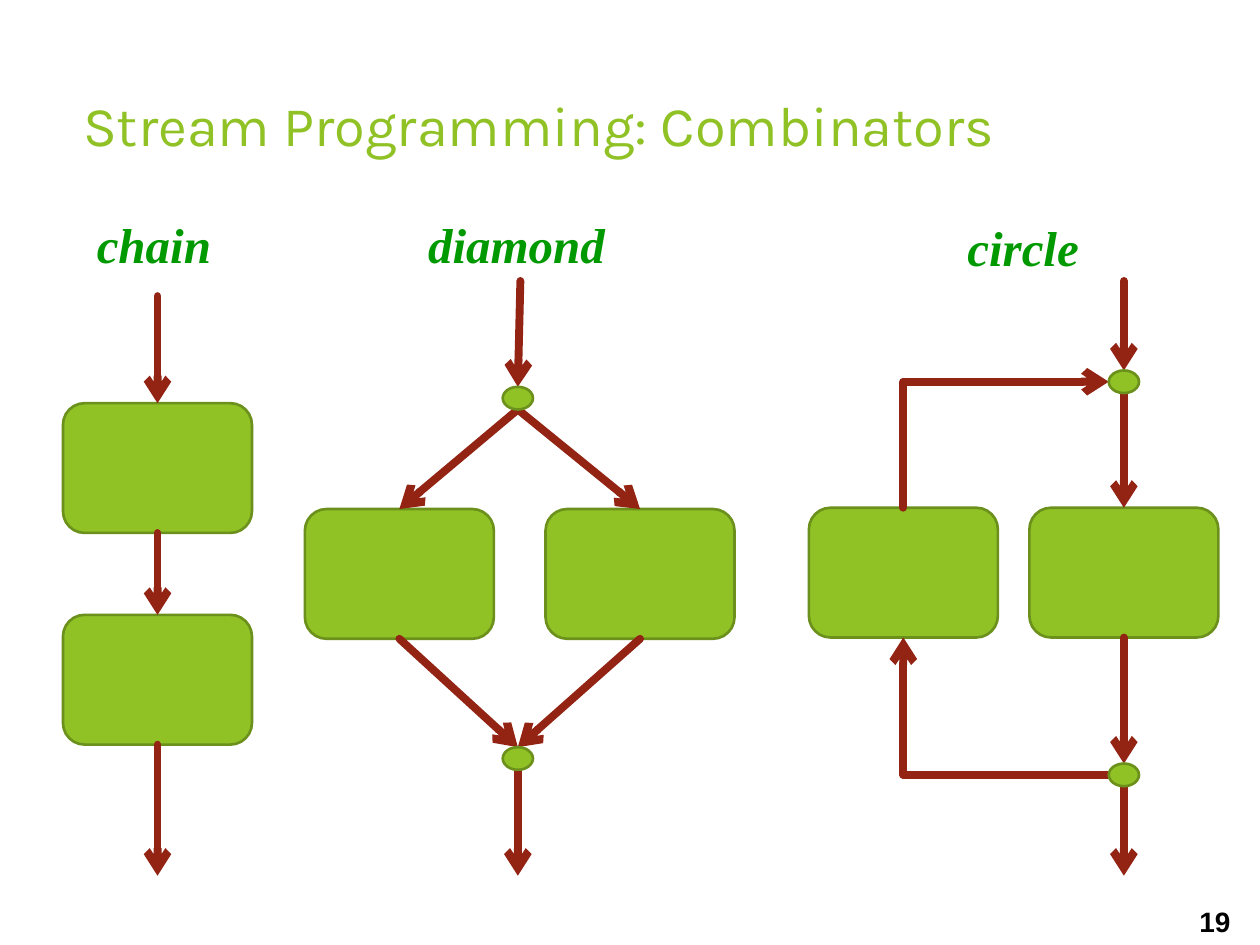
"""Build the slide on chain, diamond and circle stream combinators."""
from lxml.etree import SubElement
from pptx import Presentation
from pptx.dml.color import RGBColor
from pptx.enum.shapes import MSO_CONNECTOR, MSO_SHAPE
from pptx.enum.text import MSO_ANCHOR, MSO_AUTO_SIZE, PP_ALIGN
from pptx.oxml.ns import qn
from pptx.util import Inches, Pt

GREEN = RGBColor(0x90, 0xC2, 0x26)
EDGE_GREEN = RGBColor(0x6B, 0x90, 0x1C)
LABEL_GREEN = RGBColor(0x00, 0x99, 0x00)
RED = RGBColor(0x93, 0x23, 0x13)
BLACK = RGBColor(0, 0, 0)
TOP, LEFT, BOTTOM = 0, 1, 2
FLOW_END = 6.95


def style_run(paragraph, font_name, size, color, bold=False, italic=False):
    """Format the first run of a paragraph."""
    font = paragraph.runs[0].font
    font.name, font.size = font_name, Pt(size)
    font.bold, font.italic = bold, italic
    font.color.rgb = color


def add_title(slide, wording):
    """Fill and place the title placeholder."""
    title = slide.shapes.title
    title.left, title.top = Inches(0.56), Inches(0.67)
    title.width, title.height = Inches(9.19), Inches(1.44)
    frame = title.text_frame
    frame.text = wording
    frame.vertical_anchor = MSO_ANCHOR.TOP
    frame.paragraphs[0].alignment = PP_ALIGN.LEFT
    style_run(frame.paragraphs[0], "Karla", 32, GREEN)


def add_label(slide, wording, left, top, width, height, *style):
    """Add a one-line text box."""
    label = slide.shapes.add_textbox(
        Inches(left), Inches(top), Inches(width), Inches(height))
    frame = label.text_frame
    frame.text = wording
    frame.word_wrap = False
    frame.auto_size = MSO_AUTO_SIZE.SHAPE_TO_FIT_TEXT
    style_run(frame.paragraphs[0], *style)


def add_green_shape(slide, preset, left, top, width, height):
    """Add an outlined green shape."""
    shape = slide.shapes.add_shape(
        preset, Inches(left), Inches(top), Inches(width), Inches(height))
    shape.shadow.inherit = False
    shape.fill.solid()
    shape.fill.fore_color.rgb = GREEN
    shape.line.color.rgb = EDGE_GREEN
    shape.line.width = Pt(1.5)
    return shape


def add_stage(slide, left, top):
    """Add a processing stage."""
    return add_green_shape(
        slide, MSO_SHAPE.FLOWCHART_ALTERNATE_PROCESS, left, top, 1.5, 1.03)


def add_junction(slide, center, top):
    """Add a small split or join node."""
    return add_green_shape(
        slide, MSO_SHAPE.OVAL, center - 0.12, top, 0.24, 0.18)


def join(connector, attach, end_tag, shape, side):
    """Attach a connector end to the middle of a shape's side."""
    attach(shape, side)
    if shape.auto_shape_type == MSO_SHAPE.OVAL:
        site = next(connector._element.iter(qn(end_tag)))
        site.set("idx", str(side * 2))


def add_flow(slide, start, end, bent=False, arrow="a:tailEnd"):
    """Link two ends, each an (x, y) point or a (shape, side) pair."""
    kind = MSO_CONNECTOR.ELBOW if bent else MSO_CONNECTOR.STRAIGHT
    flow = slide.shapes.add_connector(kind, 0, 0, 0, 0)
    if hasattr(start[0], "auto_shape_type"):
        join(flow, flow.begin_connect, "a:stCxn", *start)
    else:
        flow.begin_x, flow.begin_y = (Inches(value) for value in start)
    if hasattr(end[0], "auto_shape_type"):
        join(flow, flow.end_connect, "a:endCxn", *end)
    else:
        flow.end_x, flow.end_y = (Inches(value) for value in end)
    flow.line.color.rgb = RED
    flow.line.width = Pt(4.5)
    properties = flow._element.spPr
    if bent:
        properties.find(qn("a:prstGeom")).set("prst", "bentConnector2")
    outline = properties.find(qn("a:ln"))
    outline.set("cap", "rnd")
    SubElement(outline, qn("a:round"))
    SubElement(outline, qn(arrow)).set("type", "arrow")
    SubElement(properties, qn("a:effectLst"))


def raise_to_front(*shapes):
    """Move shapes above everything drawn so far."""
    for shape in shapes:
        shape._element.getparent().append(shape._element)


def add_chain(slide):
    """Draw two stages in sequence."""
    center = 1.25
    first, second = (add_stage(slide, 0.5, top) for top in (3.2, 4.88))
    add_flow(slide, (center, 2.35), (first, TOP))
    add_flow(slide, (first, BOTTOM), (second, TOP))
    add_flow(slide, (second, BOTTOM), (center, FLOW_END))


def add_diamond(slide):
    """Draw a split into two parallel stages and their join."""
    center = 4.11
    branches = [add_stage(slide, left, 4.04) for left in (2.42, 4.33)]
    split, merge = (add_junction(slide, center, top) for top in (3.07, 5.93))
    add_flow(slide, (4.13, 2.23), (split, TOP))
    for branch in branches:
        add_flow(slide, (split, BOTTOM), (branch, TOP))
        add_flow(slide, (branch, BOTTOM), (merge, TOP))
    add_flow(slide, (merge, BOTTOM), (center, FLOW_END))
    raise_to_front(split, merge)


def add_circle(slide):
    """Draw a stage with a feedback stage looping back."""
    center = 8.92
    feedback, forward = (add_stage(slide, left, 4.03) for left in (6.42, 8.17))
    merge, split = (add_junction(slide, center, top) for top in (2.94, 6.06))
    add_flow(slide, (center, 2.23), (merge, TOP))
    add_flow(slide, (merge, BOTTOM), (forward, TOP))
    add_flow(slide, (forward, BOTTOM), (split, TOP))
    add_flow(slide, (split, BOTTOM), (center, FLOW_END))
    add_flow(slide, (split, LEFT), (feedback, BOTTOM), bent=True)
    add_flow(slide, (merge, LEFT), (feedback, TOP), bent=True,
             arrow="a:headEnd")
    raise_to_front(merge, split)


def main():
    """Build and save the slide."""
    deck = Presentation()
    deck.slide_width, deck.slide_height = Inches(10), Inches(7.5)
    slide = deck.slides.add_slide(deck.slide_layouts[5])
    add_title(slide, "Stream Programming: Combinators")
    add_chain(slide)
    add_diamond(slide)
    add_circle(slide)
    for wording, left, top, width in (("chain", 0.67, 1.65, 1.25),
                                      ("diamond", 3.3, 1.65, 1.62),
                                      ("circle", 7.58, 1.68, 1.09)):
        add_label(slide, wording, left, top, width, 0.57,
                  "Times New Roman", 28, LABEL_GREEN, True, True)
    add_label(slide, "19", 9.42, 7.13, 0.47, 0.37, "Arial", 16, BLACK, True)
    deck.save("out.pptx")


if __name__ == "__main__":
    main()
